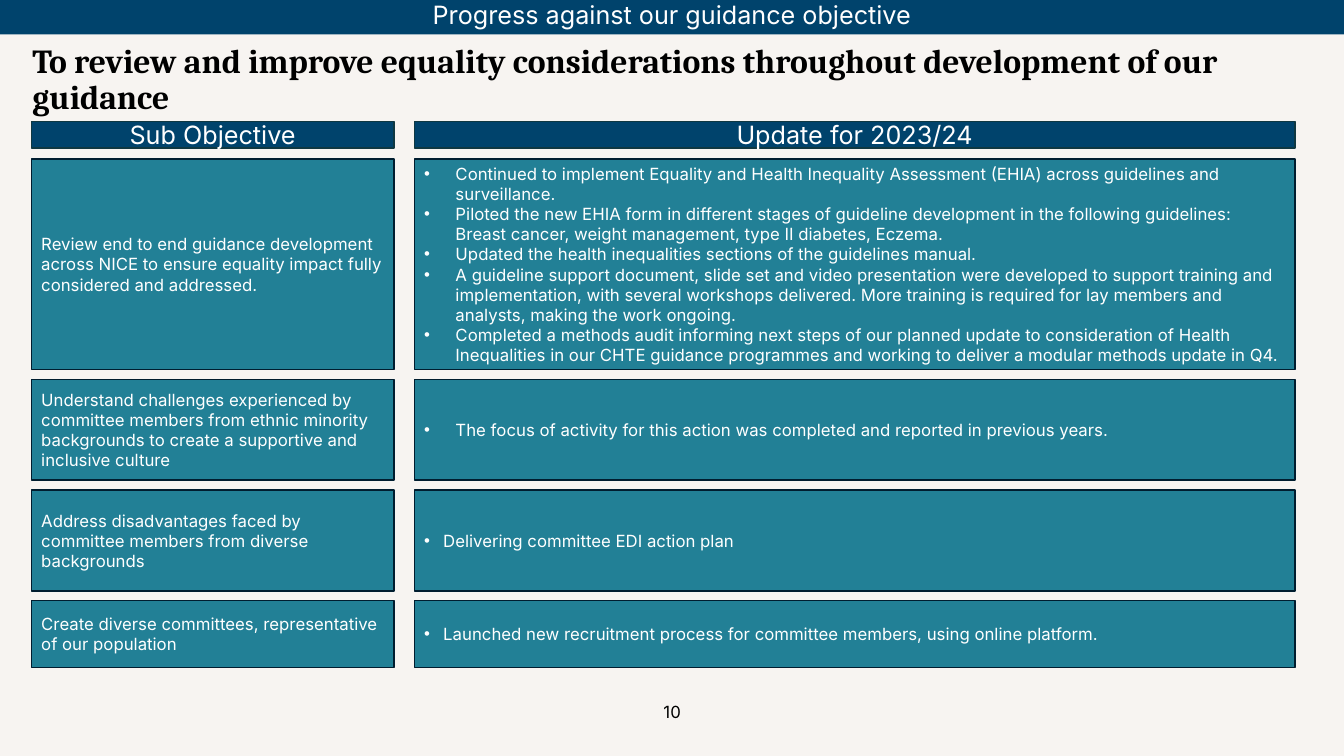
import pptx
import pptx.util
import pptx.dml.color
import pptx.enum.shapes
import pptx.enum.text
import pptx.oxml
import pptx.oxml.ns
from pptx.util import Cm

Align = pptx.enum.text.PP_ALIGN
Anchor = pptx.enum.text.MSO_ANCHOR


def colour(hex_code):
    return pptx.dml.color.RGBColor.from_string(hex_code)


def apply(target, values):
    for name, value in values.items():
        setattr(target, name, value)


class ProgressSlide:
    """Holds the style and the current slide."""
    SANS, SERIF = "Inter", "Cambria"
    PAPER, NAVY, TEAL = "F7F4F1", "00436C", "228096"
    HEADING_EDGE, CELL_EDGE = "0F3842", "001D2F"
    WHITE, BLACK = "FFFFFF", "000000"

    def __init__(self, deck):
        self.slide = deck.slides.add_slide(deck.slide_layouts[5])
        background = self.slide.background.fill
        background.solid()
        background.fore_color.rgb = colour(self.PAPER)

    def set_text(self, shape, lines, size, ink, align=Align.LEFT,
                 anchor=Anchor.MIDDLE, font=None, bold=False, spacing=1.0,
                 indent=None):
        frame = shape.text_frame
        apply(frame, {"word_wrap": True, "vertical_anchor": anchor,
                      "auto_size": pptx.enum.text.MSO_AUTO_SIZE.NONE})
        frame.text = "\n".join(lines)
        for paragraph in frame.paragraphs:
            if indent:
                self.bullet(paragraph, indent)
            apply(paragraph, {"alignment": align, "line_spacing": spacing})
            text_font = paragraph.runs[0].font
            apply(text_font, {"name": font or self.SANS, "bold": bold,
                              "size": pptx.util.Pt(size)})
            text_font.color.rgb = colour(ink)

    def bullet(self, paragraph, indent):
        properties = paragraph._p.get_or_add_pPr()
        properties.set("marL", str(Cm(indent)))
        properties.set("indent", str(-Cm(indent)))
        for tag, name, value in (("a:buFont", "typeface", "Arial"),
                                 ("a:buChar", "char", "•")):
            mark = pptx.oxml.parse_xml(f"<{tag} {pptx.oxml.ns.nsdecls('a')}/>")
            mark.set(name, value)
            properties.append(mark)

    def title(self, text, left, top, width, height):
        heading = self.slide.shapes.title
        apply(heading, {"left": Cm(left), "top": Cm(top),
                        "width": Cm(width), "height": Cm(height)})
        self.set_text(heading, [text], 24, self.BLACK, anchor=Anchor.TOP,
                      font=self.SERIF, bold=True, spacing=0.9)

    def panel(self, lines, left, top, width, height, fill, edge=None,
              size=12, **text_style):
        panel = self.slide.shapes.add_shape(
            pptx.enum.shapes.MSO_SHAPE.RECTANGLE,
            Cm(left), Cm(top), Cm(width), Cm(height))
        panel.shadow.inherit = False
        panel.fill.solid()
        panel.fill.fore_color.rgb = colour(fill)
        if edge:
            panel.line.color.rgb = colour(edge)
            panel.line.width = pptx.util.Pt(1)
        else:
            panel.line.fill.background()
        self.set_text(panel, lines, size, self.WHITE, **text_style)

    def page_number(self, text, left, top, width, height):
        number = self.slide.shapes.add_textbox(
            Cm(left), Cm(top), Cm(width), Cm(height))
        self.set_text(number, [text], 12, self.BLACK, align=Align.CENTER,
                      anchor=Anchor.TOP)


# Column name, left edge and width
COLUMNS = [("Sub Objective", 0.79, 9.14), ("Update for 2023/24", 10.44, 22.2)]
HEADING_TOP, HEADING_HEIGHT = 3.07, 0.66
FIRST_ROW_TOP, ROW_GAP = 4.01, 0.25

# Row height, bullet indent, sub objective, updates
OBJECTIVES = [
    (5.3, 0.79,
     "Review end to end guidance development across NICE to ensure equality "
     "impact fully considered and addressed.",
     ["Continued to implement Equality and Health Inequality Assessment (EHIA) "
      "across guidelines and surveillance.",
      "Piloted the new EHIA form in different stages of guideline development "
      "in the following guidelines: Breast cancer, weight management, type II "
      "diabetes, Eczema.",
      "Updated the health inequalities sections of the guidelines manual.",
      "A guideline support document, slide set and video presentation were "
      "developed to support training and implementation, with several "
      "workshops delivered. More training is required for lay members and "
      "analysts, making the work ongoing.",
      "Completed a methods audit informing next steps of our planned update to "
      "consideration of Health Inequalities in our CHTE guidance programmes "
      "and working to deliver a modular methods update in Q4."]),
    (2.54, 0.79,
     "Understand challenges experienced by committee members from ethnic "
     "minority backgrounds to create a supportive and inclusive culture",
     ["The focus of activity for this action was completed and reported in "
      "previous years."]),
    (2.54, 0.48,
     "Address disadvantages faced by committee members from diverse "
     "backgrounds",
     ["Delivering committee EDI action plan"]),
    (1.68, 0.48,
     "Create diverse committees, representative of our population",
     ["Launched new recruitment process for committee members, using online "
      "platform."]),
]


def main():
    deck = pptx.Presentation()
    apply(deck, {"slide_width": Cm(33.87), "slide_height": Cm(19.05)})
    progress = ProgressSlide(deck)

    # Title and top band
    progress.title("To review and improve equality considerations throughout "
                   "development of our guidance", 0.56, 0.99, 33.2, 3.2)
    progress.panel(["Progress against our guidance objective"],
                   0, -0.15, 33.87, 1.02, progress.NAVY, size=18,
                   align=Align.CENTER)

    # Column headings
    for heading, left, width in COLUMNS:
        progress.panel([heading], left, HEADING_TOP, width, HEADING_HEIGHT,
                       progress.NAVY, progress.HEADING_EDGE, size=18,
                       align=Align.CENTER)

    # Objectives and their updates
    top = FIRST_ROW_TOP
    for height, indent, objective, updates in OBJECTIVES:
        cells = [([objective], None), (updates, indent)]
        for (_, left, width), (lines, cell_indent) in zip(COLUMNS, cells):
            progress.panel(lines, left, top, width, height, progress.TEAL,
                           progress.CELL_EDGE, indent=cell_indent)
        top += height + ROW_GAP

    # Page number
    progress.page_number("10", 13.13, 17.55, 7.62, 1.02)
    deck.save("out.pptx")


if __name__ == "__main__":
    main()
